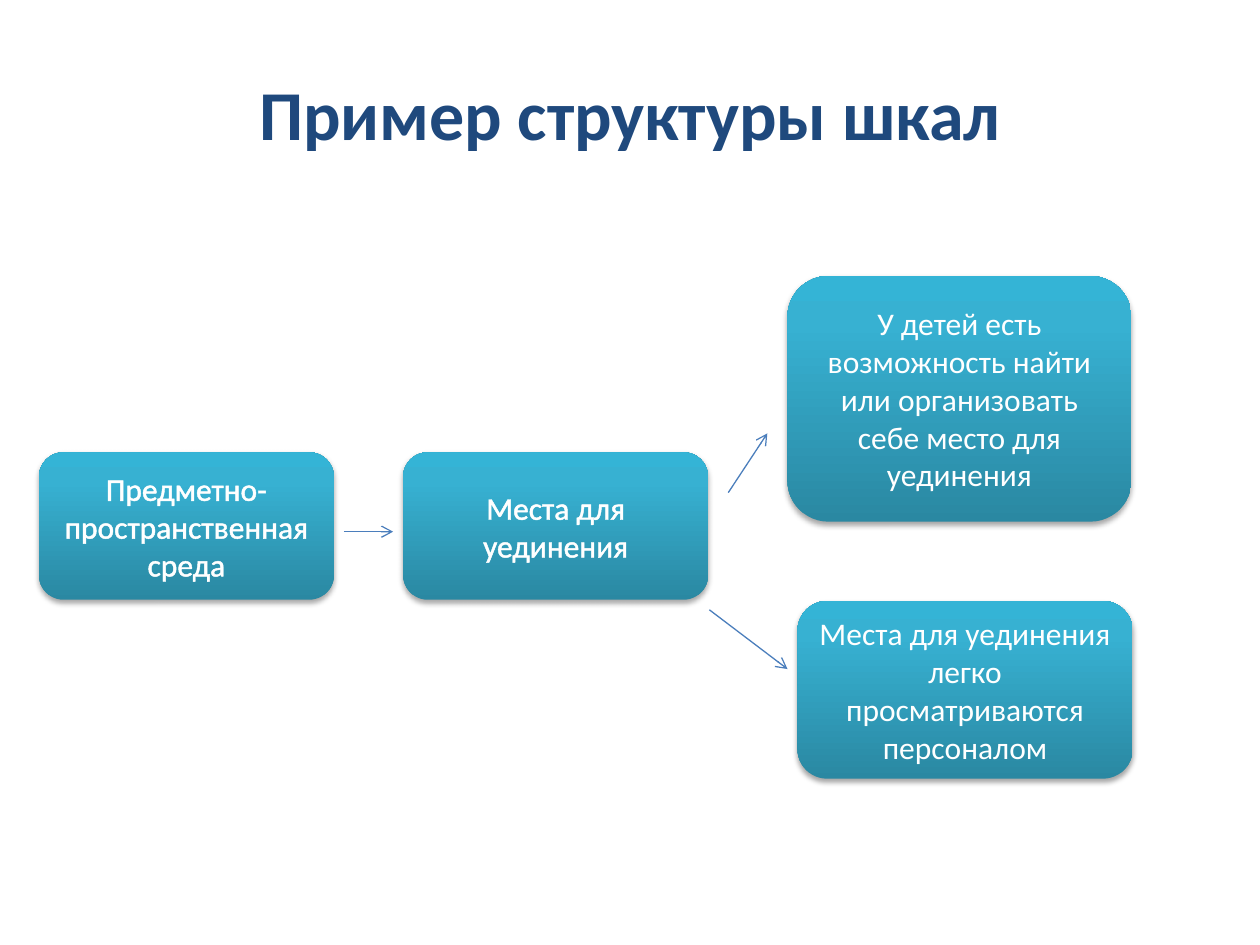
"""Build a slide showing how a rating scale branches into its indicators."""
from lxml import etree
from pptx import Presentation
from pptx.dml.color import RGBColor
from pptx.enum.shapes import MSO_CONNECTOR, MSO_SHAPE
from pptx.enum.text import MSO_ANCHOR, PP_ALIGN
from pptx.oxml import parse_xml
from pptx.oxml.ns import nsdecls, qn
from pptx.util import Inches, Pt

ROUND = MSO_SHAPE.ROUNDED_RECTANGLE
LINE = MSO_CONNECTOR.STRAIGHT
MIDDLE = MSO_ANCHOR.MIDDLE
CENTER = PP_ALIGN.CENTER
COLORS = {"title": "1F497D", "text": "FFFFFF", "arrow": "4B7EBC",
          "low": "2A88A2", "mid": "37B1D2", "high": "34B4D6", "shade": "000000"}
NS = nsdecls("a")
STOPS = "".join(
    f'<a:gs pos="{pos}"><a:srgbClr val="{COLORS[key]}"/></a:gs>'
    for pos, key in ((0, "low"), (80000, "mid"), (100000, "high")))
GRADIENT = (f'<a:gradFill {NS} rotWithShape="1"><a:gsLst>{STOPS}</a:gsLst>'
            '<a:lin ang="16200000" scaled="0"/></a:gradFill>')
SHADOW = (f'<a:outerShdw {NS} blurRad="40000" dist="23000" dir="5400000" '
          f'rotWithShape="0"><a:srgbClr val="{COLORS["shade"]}">'
          '<a:alpha val="35000"/></a:srgbClr></a:outerShdw>')
OUTLINE = (f'<a:ln {NS} w="18415"><a:solidFill>'
           f'<a:srgbClr val="{COLORS["text"]}"/></a:solidFill></a:ln>')


def write(shape, text, size, color, bold=False):
    frame = shape.text_frame
    frame.word_wrap = True
    frame.vertical_anchor = MIDDLE
    para = frame.paragraphs[0]
    para.alignment = CENTER
    run = para.add_run()
    run.text = text
    run.font.name = "Calibri"
    run.font.size = Pt(size)
    run.font.bold = bold
    run.font.color.rgb = RGBColor.from_string(COLORS[color])
    return run


deck = Presentation()
deck.slide_width, deck.slide_height = Inches(10), Inches(7.5)
slide = deck.slides.add_slide(deck.slide_layouts[6])
shapes = slide.shapes

title = shapes.add_textbox(Inches(0.5), Inches(0.3), Inches(9), Inches(1.18))
write(title, "Пример структуры шкал", 40, "title", True)

boxes = [
    (0.31, 3.59, 2.34, 1.17, "Предметно-пространственная среда", True),
    (3.2, 3.59, 2.42, 1.17, "Места для уединения", True),
    (6.25, 2.19, 2.73, 1.95,
     "У детей есть возможность найти или организовать себе место для уединения",
     False),
    (6.33, 4.77, 2.66, 1.41,
     "Места для уединения легко просматриваются персоналом", False),
]
for left, top, width, height, text, heavy in boxes:
    box = shapes.add_shape(ROUND, Inches(left), Inches(top),
                           Inches(width), Inches(height))
    box.line.fill.background()
    box.shadow.inherit = False
    props = box.element.spPr
    props.find(qn("a:ln")).addprevious(parse_xml(GRADIENT))
    props.find(qn("a:effectLst")).append(parse_xml(SHADOW))
    run = write(box, text, 18, "text")
    if heavy:
        run.font.fill
        run.font._element.insert(0, parse_xml(OUTLINE))

arrows = [
    (2.73, 4.22, 3.12, 4.22),
    (5.78, 3.91, 6.09, 3.44),
    (5.63, 4.84, 6.25, 5.31),
]
for ends in arrows:
    arrow = shapes.add_connector(LINE, *[Inches(end) for end in ends])
    arrow.line.width = Pt(0.75)
    arrow.line.color.rgb = RGBColor.from_string(COLORS["arrow"])
    props = arrow.element.spPr
    etree.SubElement(props.find(qn("a:ln")), qn("a:tailEnd"), type="arrow")
    etree.SubElement(props, qn("a:effectLst"))

deck.save("out.pptx")
